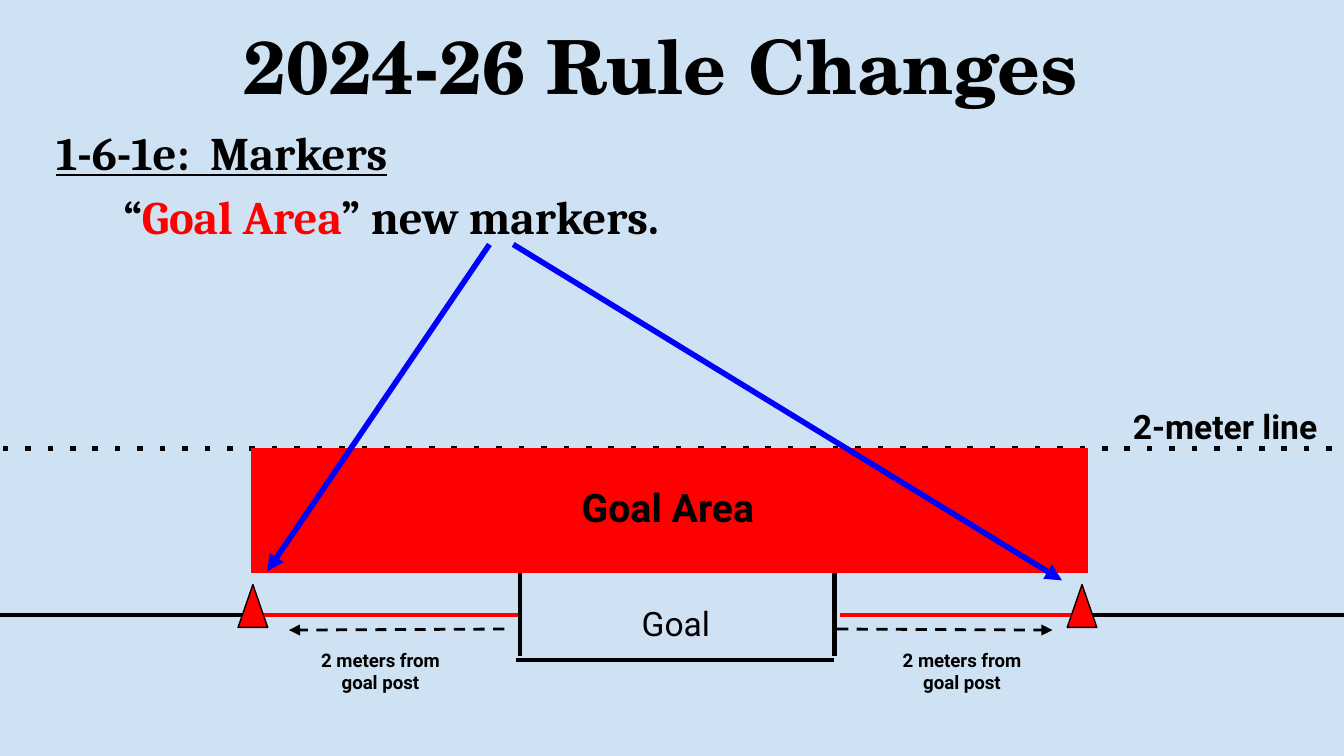
"""Build the goal area markers slide of the 2024-26 rule changes."""
from dataclasses import dataclass, field

from lxml.etree import SubElement
from pptx import Presentation
from pptx.dml.color import RGBColor
from pptx.enum.shapes import MSO_CONNECTOR, MSO_SHAPE
from pptx.enum.text import MSO_ANCHOR, PP_ALIGN
from pptx.oxml.ns import qn
from pptx.slide import Slide
from pptx.util import Cm, Pt


@dataclass(frozen=True)
class Theme:
    sky: str = "CFE2F3"
    ink: str = "000000"
    red: str = "FF0000"
    blue: str = "0000FF"
    title_font: str = "TeX Gyre Schola"
    body_font: str = "Cambria"
    label_font: str = "Roboto"
    title_size: float = 40
    body_size: float = 25
    area_size: float = 21
    label_size: float = 18
    note_size: float = 10


T = Theme()


@dataclass(frozen=True)
class Run:
    text: str
    color: str = T.ink
    fmt: dict = field(default_factory=dict)


@dataclass(frozen=True)
class Label:
    box: tuple[float, float, float, float]
    paras: list[list[Run]]
    size: float
    font: str = T.label_font
    bold: bool = True
    align: PP_ALIGN = PP_ALIGN.CENTER
    anchor: MSO_ANCHOR = MSO_ANCHOR.TOP
    spacing: float = 1.0


@dataclass(frozen=True)
class Line:
    start: tuple[float, float]
    end: tuple[float, float]
    color: str = T.ink
    width: float = 2.25
    dash: str = ""
    arrow: bool = False


@dataclass(frozen=True)
class Block:
    kind: MSO_SHAPE
    box: tuple[float, float, float, float]
    outline: str


def add_label(s: Slide, label: Label) -> None:
    tf = s.shapes.add_textbox(*map(Cm, label.box)).text_frame
    frame_fmt = {
        "word_wrap": True,
        "vertical_anchor": label.anchor,
        **{f"margin_{side}": Cm(0.25) for side in ("left", "top", "right", "bottom")},
    }
    for name, value in frame_fmt.items():
        setattr(tf, name, value)
    for i, runs in enumerate(label.paras):
        p = tf.add_paragraph() if i else tf.paragraphs[0]
        p.alignment, p.line_spacing = label.align, label.spacing
        for run in runs:
            r = p.add_run()
            r.text = run.text
            fmt = {"name": label.font, "size": Pt(label.size), "bold": label.bold}
            for name, value in {**fmt, **run.fmt}.items():
                setattr(r.font, name, value)
            r.font.color.rgb = RGBColor.from_string(run.color)


def add_line(s: Slide, line: Line) -> None:
    points = map(Cm, (*line.start, *line.end))
    sp = s.shapes.add_connector(MSO_CONNECTOR.STRAIGHT, *points)
    sp.line.color.rgb = RGBColor.from_string(line.color)
    sp.line.width = Pt(line.width)
    ln = sp.line._get_or_add_ln()
    if line.dash:
        SubElement(ln, qn("a:prstDash"), val=line.dash)
    if line.arrow:
        SubElement(ln, qn("a:tailEnd"), type="triangle")
    SubElement(sp._element.spPr, qn("a:effectLst"))


def add_block(s: Slide, block: Block) -> None:
    sp = s.shapes.add_shape(block.kind, *map(Cm, block.box))
    sp.shadow.inherit = False
    sp.fill.solid()
    sp.fill.fore_color.rgb = RGBColor.from_string(T.red)
    sp.line.color.rgb = RGBColor.from_string(block.outline)
    sp.line.width = Pt(0.75)


WIDTH, HEIGHT = 25.4, 14.29
GOAL_LINE, TWO_METER = 11.63, 8.48
LEFT_POST, RIGHT_POST = 9.83, 15.77
AREA_BOTTOM, POST_END, GOAL_BACK = 10.8, 12.4, 12.47

HEADINGS = [
    Label((0.86, 0.05, 23.67, 2.34), [[Run("2024-26 Rule Changes ")]],
          T.title_size, T.title_font, anchor=MSO_ANCHOR.MIDDLE),
    Label((0.81, 1.93, 23.67, 5.21),
          [[Run("1-6-1e:  Markers", fmt={"underline": True})],
           [Run("\t“"), Run("Goal Area", T.red), Run("” new markers.")]],
          T.body_size, T.body_font, align=PP_ALIGN.LEFT, spacing=1.15),
]
FIELD_LINES = [
    Line((0, GOAL_LINE), (4.98, GOAL_LINE)),
    Line((4.88, GOAL_LINE), (LEFT_POST, GOAL_LINE), T.red),
    Line((15.88, GOAL_LINE), (20.85, GOAL_LINE), T.red),
    Line((20.55, GOAL_LINE), (WIDTH, GOAL_LINE)),
    *[Line((x, AREA_BOTTOM), (x, POST_END)) for x in (LEFT_POST, RIGHT_POST)],
    Line((9.75, GOAL_BACK), (RIGHT_POST, GOAL_BACK)),
    Line((0.05, TWO_METER), (WIDTH, TWO_METER), width=3, dash="dot"),
]
BLOCKS = [
    Block(MSO_SHAPE.RECTANGLE, (4.75, TWO_METER, 15.8, 2.34), T.red),
    *[Block(MSO_SHAPE.ISOSCELES_TRIANGLE, (x, 11.05, 0.56, 0.81), T.ink)
      for x in (20.17, 4.5)],
]
LABELS = [
    Label((21.16, 7.42, 4.1, 0.89), [[Run("2-meter line")]],
          T.label_size, align=PP_ALIGN.LEFT),
    Label((8.23, 8.89, 8.79, 1.19), [[Run("Goal Area")]], T.area_size),
    *[Label((x, 12.01, 2.74, 1.19), [[Run("2 meters from goal post")]], T.note_size)
      for x in (5.82, 16.81)],
    Label((11.71, 11.15, 2.13, 1.04), [[Run("Goal")]], T.label_size, bold=False),
]
ARROWS = [
    Line((9.25, 4.62), (5.05, 10.8), T.blue, 3, arrow=True),
    Line((9.7, 4.62), (20.07, 10.97), T.blue, 3, arrow=True),
    *[Line((x1, 11.89), (x2, 11.91), width=1.5, dash="dash", arrow=True)
      for x1, x2 in ((9.53, 5.46), (15.82, 19.89))],
]


def main() -> None:
    prs = Presentation()
    prs.slide_width, prs.slide_height = Cm(WIDTH), Cm(HEIGHT)
    s = prs.slides.add_slide(prs.slide_layouts[6])
    s.background.fill.solid()
    s.background.fill.fore_color.rgb = RGBColor.from_string(T.sky)
    for draw, items in (
        (add_label, HEADINGS),
        (add_line, FIELD_LINES),
        (add_block, BLOCKS),
        (add_label, LABELS),
        (add_line, ARROWS),
    ):
        for item in items:
            draw(s, item)
    prs.save("out.pptx")


if __name__ == "__main__":
    main()
